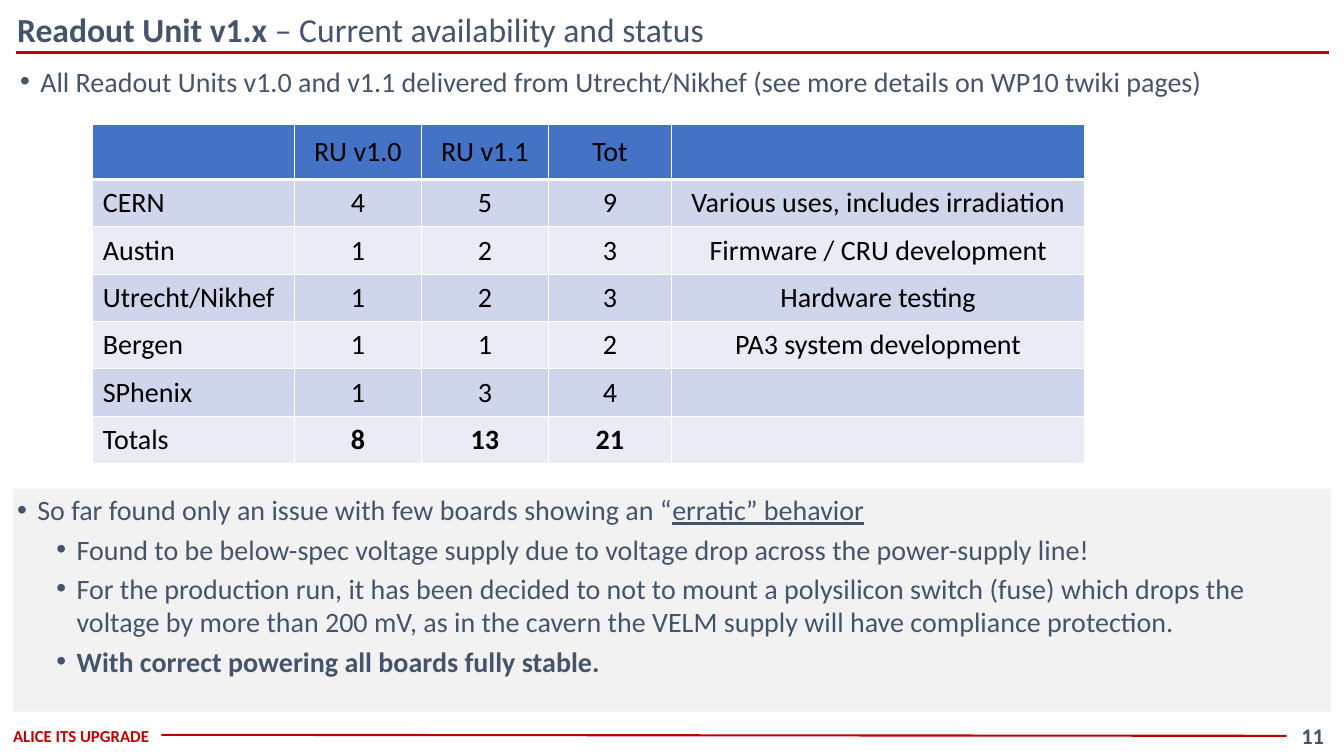
"""Build the slide on Readout Unit availability and status."""
from dataclasses import dataclass

from lxml.etree import SubElement
from pptx import Presentation
from pptx.dml.color import RGBColor
from pptx.enum.shapes import MSO_CONNECTOR, MSO_SHAPE
from pptx.enum.text import MSO_ANCHOR, PP_ALIGN
from pptx.oxml.ns import qn
from pptx.slide import Slide
from pptx.table import _Cell
from pptx.text.text import TextFrame, _Paragraph
from pptx.util import Emu, Pt

EMU_PER_PX = 9144


@dataclass(frozen=True)
class Theme:
    font: str = "Calibri"
    ink: str = "44546A"
    accent: str = "C00000"
    table_ink: str = "000000"
    header: str = "4472C4"
    bands: tuple[str, str] = ("CFD5EA", "E9EBF5")
    grid: str = "FFFFFF"
    panel: str = "F2F2F2"
    title_size: int = 24
    body_size: int = 20
    number_size: int = 16
    footer_size: int = 12
    bullet_gap: int = 4


@dataclass(frozen=True)
class Box:
    left: int
    top: int
    width: int
    height: int

    def emu(self) -> tuple[Emu, ...]:
        return tuple(px(side) for side in (self.left, self.top, self.width, self.height))


@dataclass(frozen=True)
class Span:
    text: str
    bold: bool = False
    underline: bool = False


@dataclass(frozen=True)
class Bullet:
    spans: tuple[Span, ...]
    indent: int = 20


@dataclass(frozen=True)
class Label:
    box: Box
    spans: tuple[Span, ...]
    size: int
    color: str
    align: PP_ALIGN = PP_ALIGN.CENTER
    inset: int = 4
    wrap: bool = True


@dataclass(frozen=True)
class Rule:
    start: tuple[int, int]
    end: tuple[int, int]
    weight: float


THEME = Theme()
LABELS = (
    Label(Box(2, 722, 157, 16), (Span("ALICE ITS UPGRADE", bold=True),),
          THEME.footer_size, THEME.accent, inset=0),
    Label(Box(1276, 714, 52, 31), (Span("11", bold=True),),
          THEME.number_size, THEME.ink, wrap=False),
    Label(Box(13, 5, 1305, 47),
          (Span("Readout Unit v1.x", bold=True), Span(" – Current availability and status")),
          THEME.title_size, THEME.ink, PP_ALIGN.LEFT),
)
RULES = (Rule((16, 52), (1318, 52), 2.25), Rule((1276, 730), (160, 729), 1.5))
DELIVERY = (
    Bullet((Span("All Readout Units v1.0 and v1.1 delivered from Utrecht/Nikhef "
                 "(see more details on WP10 twiki pages)"),)),
)
FINDINGS = (
    Bullet((Span("So far found only an issue with few boards showing an “"),
            Span("erratic” behavior", underline=True))),
    Bullet((Span("Found to be below-spec voltage supply due to voltage drop "
                 "across the power-supply line!"),), 59),
    Bullet((Span("For the production run, it has been decided to not to mount a polysilicon "
                 "switch (fuse) which drops the voltage by more than 200 mV, as in the cavern "
                 "the VELM supply will have compliance protection."),), 59),
    Bullet((Span("With correct powering all boards fully stable.", bold=True),), 59),
)
AVAILABILITY = (
    ("", "RU v1.0", "RU v1.1", "Tot", ""),
    ("CERN", "4", "5", "9", "Various uses, includes irradiation"),
    ("Austin", "1", "2", "3", "Firmware / CRU development"),
    ("Utrecht/Nikhef", "1", "2", "3", "Hardware testing"),
    ("Bergen", "1", "1", "2", "PA3 system development"),
    ("SPhenix", "1", "3", "4", ""),
    ("Totals", "8", "13", "21", ""),
)
COLUMN_WIDTHS = (200, 126, 126, 122, 410)
HEADER_HEIGHT, ROW_HEIGHT = 55, 47


def px(length: int) -> Emu:
    return Emu(length * EMU_PER_PX)


def rgb(color: str) -> RGBColor:
    return RGBColor.from_string(color)


def write_spans(paragraph: _Paragraph, spans: tuple[Span, ...], size: int, color: str) -> None:
    for span in spans:
        run = paragraph.add_run()
        run.text = span.text
        run.font.name = THEME.font
        run.font.size = Pt(size)
        run.font.color.rgb = rgb(color)
        run.font.bold = span.bold
        run.font.underline = span.underline


def set_insets(frame: TextFrame, inset: int) -> None:
    frame.margin_left = frame.margin_right = px(inset)
    frame.margin_top = frame.margin_bottom = px(inset)


def draw_label(slide: Slide, label: Label) -> None:
    frame = slide.shapes.add_textbox(*label.box.emu()).text_frame
    set_insets(frame, label.inset)
    frame.word_wrap = label.wrap
    frame.vertical_anchor = MSO_ANCHOR.MIDDLE
    frame.paragraphs[0].alignment = label.align
    write_spans(frame.paragraphs[0], label.spans, label.size, label.color)


def draw_rule(slide: Slide, rule: Rule) -> None:
    ends = (px(length) for length in rule.start + rule.end)
    connector = slide.shapes.add_connector(MSO_CONNECTOR.STRAIGHT, *ends)
    connector.line.color.rgb = rgb(THEME.accent)
    connector.line.width = Pt(rule.weight)
    SubElement(connector._element.spPr, qn("a:effectLst"))


def write_bullets(frame: TextFrame, bullets: tuple[Bullet, ...]) -> None:
    set_insets(frame, 4)
    frame.word_wrap = True
    frame.vertical_anchor = MSO_ANCHOR.TOP
    for index, bullet in enumerate(bullets):
        paragraph = frame.add_paragraph() if index else frame.paragraphs[0]
        paragraph.alignment = PP_ALIGN.LEFT
        if index:
            paragraph.space_before = Pt(THEME.bullet_gap)
        properties = paragraph._p.get_or_add_pPr()
        properties.set("marL", str(px(bullet.indent)))
        properties.set("indent", str(px(-20)))
        SubElement(properties, qn("a:buFont"), typeface="Arial")
        SubElement(properties, qn("a:buChar"), char="•")
        write_spans(paragraph, bullet.spans, THEME.body_size, THEME.ink)


def set_borders(cell: _Cell, bottom_weight: int) -> None:
    properties = cell._tc.get_or_add_tcPr()
    for side, weight in (("L", 1), ("R", 1), ("T", 1), ("B", bottom_weight)):
        border = SubElement(properties, qn(f"a:ln{side}"), w=str(Pt(weight)))
        SubElement(SubElement(border, qn("a:solidFill")), qn("a:srgbClr"), val=THEME.grid)


def draw_availability(slide: Slide) -> None:
    height = HEADER_HEIGHT + ROW_HEIGHT * (len(AVAILABILITY) - 1)
    box = Box(92, 123, sum(COLUMN_WIDTHS), height)
    table = slide.shapes.add_table(len(AVAILABILITY), len(COLUMN_WIDTHS), *box.emu()).table
    for column, width in zip(table.columns, COLUMN_WIDTHS):
        column.width = px(width)
    for row, values in enumerate(AVAILABILITY):
        table.rows[row].height = px(ROW_HEIGHT if row else HEADER_HEIGHT)
        is_total = row == len(AVAILABILITY) - 1
        for column, value in enumerate(values):
            cell = table.cell(row, column)
            set_borders(cell, 1 if row else 3)
            cell.fill.solid()
            cell.fill.fore_color.rgb = rgb(THEME.bands[(row - 1) % 2] if row else THEME.header)
            cell.vertical_anchor = MSO_ANCHOR.MIDDLE
            paragraph = cell.text_frame.paragraphs[0]
            paragraph.alignment = PP_ALIGN.CENTER if column else PP_ALIGN.LEFT
            if value:
                span = Span(value, bold=is_total and column > 0)
                write_spans(paragraph, (span,), THEME.body_size, THEME.table_ink)


def draw_findings(slide: Slide) -> None:
    panel = slide.shapes.add_shape(MSO_SHAPE.RECTANGLE, *Box(13, 485, 1307, 221).emu())
    panel.shadow.inherit = False
    panel.fill.solid()
    panel.fill.fore_color.rgb = rgb(THEME.panel)
    panel.line.fill.background()
    write_bullets(panel.text_frame, FINDINGS)


def main() -> None:
    presentation = Presentation()
    presentation.slide_width, presentation.slide_height = px(1333), px(750)
    slide = presentation.slides.add_slide(presentation.slide_layouts[6])
    for rule in RULES:
        draw_rule(slide, rule)
    for label in LABELS:
        draw_label(slide, label)
    write_bullets(slide.shapes.add_textbox(*Box(16, 60, 1281, 55).emu()).text_frame, DELIVERY)
    draw_availability(slide)
    draw_findings(slide)
    presentation.save("out.pptx")


if __name__ == "__main__":
    main()
